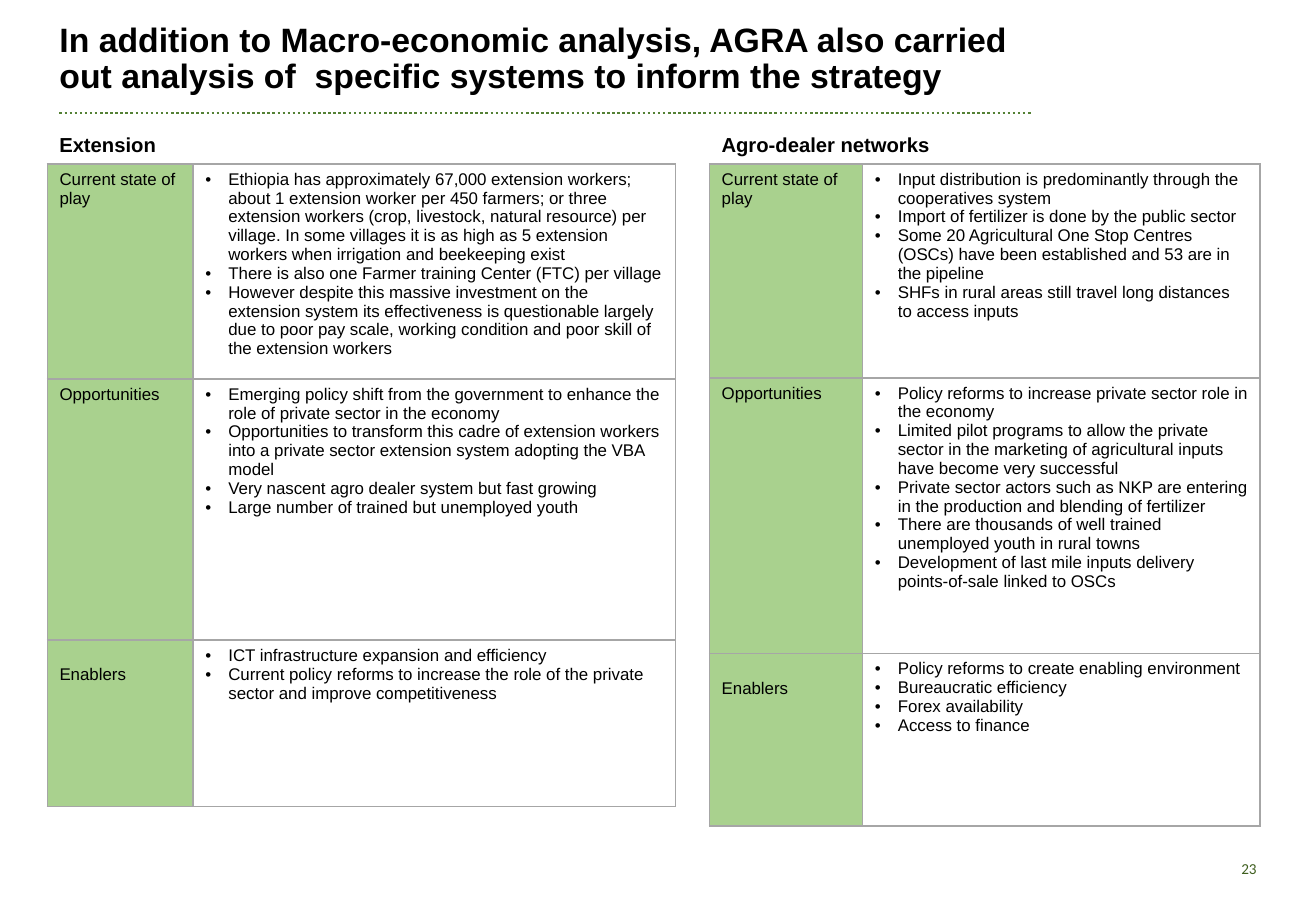
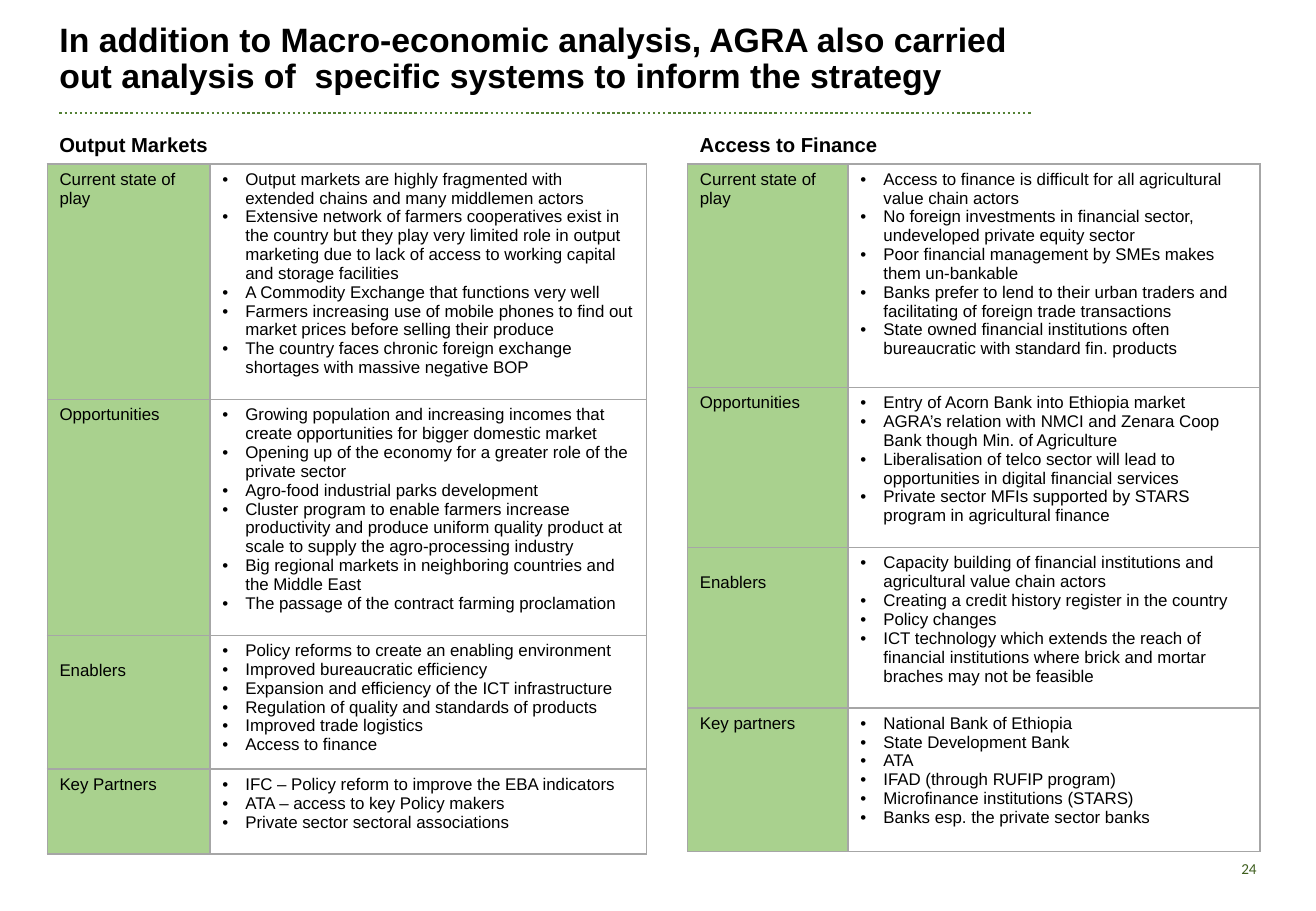
from dataclasses import dataclass

from lxml import etree
from pptx import Presentation
from pptx import util as u
from pptx.dml.color import RGBColor
from pptx.enum import dml, shapes, text
from pptx.oxml import ns


@dataclass(frozen=True)
class Theme:
    ink: str = "000000"
    paper: str = "FFFFFF"
    label: str = "A9D18E"
    border: str = "A6A6A6"
    rule: str = "548135"
    number: str = "3F5F1F"
    body_font: str = "Arial"
    number_font: str = "Calibri"
    title_size: int = 20
    heading_size: int = 12
    body_size: int = 10
    number_size: int = 9


T = Theme()
WIDTH, HEIGHT = u.Inches(10.83), u.Inches(7.5)
LEFT, RIGHT = 3.6, 95.75
TITLE_LEFT, RULE_RIGHT, RULE_Y = 4.52, 78.39, 12.4
HEADING_TOP, TABLE_TOP = 13.87, 18
TITLE = ("In addition to Macro-economic analysis, AGRA also carried out "
         "analysis of  specific systems to inform the strategy")


def x(share):
    return round(WIDTH * share / 100)


def y(share):
    return round(HEIGHT * share / 100)


def add_text(p, content, size=T.body_size, font=T.body_font, color=T.ink,
             bold=False, align=None, spacing=None):
    r = p.add_run()
    r.text = content
    r.font.size, r.font.name, r.font.bold = u.Pt(size), font, bold
    r.font.color.rgb = RGBColor.from_string(color)
    if align is not None:
        p.alignment = align
    if spacing is not None:
        p.line_spacing = spacing


def sub(parent, tag, **attrs):
    return etree.SubElement(parent, ns.qn(tag), **attrs)


def add_bullet(p):
    pPr = p._p.get_or_add_pPr()
    indent = u.Inches(0.19)
    pPr.set("marL", str(indent))
    pPr.set("indent", str(-indent))
    sub(sub(pPr, "a:buClr"), "a:srgbClr", val=T.ink)
    sub(pPr, "a:buFont", typeface=T.body_font)
    sub(pPr, "a:buChar", char="•")


def style_cell(cell, fill):
    tcPr = cell._tc.get_or_add_tcPr()
    for side in "LRTB":
        ln = sub(tcPr, f"a:ln{side}", w=str(u.Pt(1)))
        sub(sub(ln, "a:solidFill"), "a:srgbClr", val=T.border)
    cell.fill.solid()
    cell.fill.fore_color.rgb = RGBColor.from_string(fill)


class Deck:
    """Holds the presentation, its shared style and the current slide."""

    def __init__(self):
        self.prs = Presentation()
        self.prs.slide_width, self.prs.slide_height = WIDTH, HEIGHT
        self.s = None

    def slide(self, number):
        self.s = self.prs.slides.add_slide(self.prs.slide_layouts[6])
        self.textbox(73.04, 92.67, 23.36, 5.33, str(number),
                     anchor=text.MSO_ANCHOR.MIDDLE, size=T.number_size,
                     font=T.number_font, color=T.number,
                     align=text.PP_ALIGN.RIGHT)
        self.rule()
        self.textbox(TITLE_LEFT, 2, 73.13, 8.53, TITLE, inset=0,
                     anchor=text.MSO_ANCHOR.BOTTOM, size=T.title_size,
                     bold=True, spacing=0.9)

    def textbox(self, left, top, width, height, content, inset=None,
                anchor=text.MSO_ANCHOR.TOP, **fmt):
        sp = self.s.shapes.add_textbox(x(left), y(top), x(width), y(height))
        tf = sp.text_frame
        tf.word_wrap, tf.vertical_anchor = True, anchor
        if inset is not None:
            tf.margin_left = tf.margin_right = inset
            tf.margin_top = tf.margin_bottom = inset
        add_text(tf.paragraphs[0], content, **fmt)

    def rule(self):
        sp = self.s.shapes.add_connector(
            shapes.MSO_CONNECTOR.STRAIGHT, x(TITLE_LEFT), y(RULE_Y),
            x(RULE_RIGHT), y(RULE_Y))
        sp.line.color.rgb = RGBColor.from_string(T.rule)
        sp.line.width = u.Pt(1.5)
        sp.line.dash_style = dml.MSO_LINE.ROUND_DOT
        sub(sp._element.spPr, "a:effectLst")

    def panel(self, heading, left, right, label_width, rows):
        width = right - left
        self.textbox(left, HEADING_TOP, width, 4, heading,
                     size=T.heading_size, bold=True)
        total = sum(height for _, height, _ in rows)
        table = self.s.shapes.add_table(
            len(rows), 2, x(left), y(TABLE_TOP), x(width), y(total)).table
        table.first_row = table.horz_banding = False
        table.columns[0].width = x(label_width)
        table.columns[1].width = x(width - label_width)
        for row, (label, height, points) in zip(table.rows, rows):
            row.height = y(height)
            name, body = row.cells
            style_cell(name, T.label)
            style_cell(body, T.paper)
            if label == "Enablers":
                name.margin_top = u.Inches(0.21)
            add_text(name.text_frame.paragraphs[0], label)
            tf = body.text_frame
            for i, point in enumerate(points):
                p = tf.add_paragraph() if i else tf.paragraphs[0]
                add_bullet(p)
                add_text(p, point)


EXTENSION = [
    ("Current state of play", 23.6, [
        "Ethiopia has approximately 67,000 extension workers; about 1 extension worker per 450 "
        "farmers; or three extension workers (crop, livestock, natural resource) per village. In "
        "some villages it is as high as 5 extension workers when irrigation and beekeeping exist",
        "There is also one Farmer training Center (FTC) per village",
        "However despite this massive investment on the extension system its effectiveness is "
        "questionable largely due to poor pay scale, working condition and poor skill of the "
        "extension workers"]),
    ("Opportunities", 28.67, [
        "Emerging policy shift from the government to enhance the role of private sector in the "
        "economy",
        "Opportunities to transform this cadre of extension workers into a private sector "
        "extension system adopting the VBA model",
        "Very nascent agro dealer system but fast growing",
        "Large number of trained but unemployed youth"]),
    ("Enablers", 18.27, [
        "ICT infrastructure expansion and efficiency",
        "Current policy reforms to increase the role of the private sector and improve "
        "competitiveness"]),
]

AGRO_DEALERS = [
    ("Current state of play", 23.47, [
        "Input distribution is predominantly through the cooperatives system",
        "Import of fertilizer is done by the public sector",
        "Some 20 Agricultural One Stop Centres (OSCs) have been established and 53 are in the "
        "pipeline",
        "SHFs in rural areas still travel long distances to access inputs"]),
    ("Opportunities", 30.27, [
        "Policy reforms to increase private sector role in the economy",
        "Limited pilot programs to allow the private sector in the marketing of agricultural "
        "inputs have become very successful",
        "Private sector actors such as NKP are entering in the production and blending of "
        "fertilizer",
        "There are thousands of well trained unemployed youth in rural towns",
        "Development of last mile inputs delivery points-of-sale linked to OSCs"]),
    ("Enablers", 18.93, [
        "Policy reforms to create enabling environment",
        "Bureaucratic efficiency",
        "Forex availability",
        "Access to finance"]),
]

OUTPUT_MARKETS = [
    ("Current state of play", 25.87, [
        "Output markets are highly fragmented with extended chains and many middlemen actors",
        "Extensive network of farmers cooperatives exist in the country but they play very "
        "limited role in output marketing due to lack of access to working capital and storage "
        "facilities",
        "A Commodity Exchange that functions very well",
        "Farmers increasing use of mobile phones to find out market prices before selling their "
        "produce",
        "The country faces chronic foreign exchange shortages with massive negative BOP"]),
    ("Opportunities", 25.87, [
        "Growing population and increasing incomes that create opportunities for bigger domestic "
        "market",
        "Opening up of the economy for a greater role of the private sector",
        "Agro-food industrial parks development",
        "Cluster program to enable farmers increase productivity and produce uniform quality "
        "product at scale to supply the agro-processing industry",
        "Big regional markets in neighboring countries and the Middle East",
        "The passage of the contract farming proclamation"]),
    ("Enablers", 14.67, [
        "Policy reforms to create an enabling environment",
        "Improved bureaucratic efficiency",
        "Expansion and efficiency of the ICT infrastructure",
        "Regulation of quality and standards of products",
        "Improved trade logistics",
        "Access to finance"]),
    ("Key Partners", 9.33, [
        "IFC – Policy reform to improve the EBA indicators",
        "ATA – access to key Policy makers",
        "Private sector sectoral associations"]),
]

FINANCE = [
    ("Current state of play", 24.53, [
        "Access to finance is difficult for all agricultural value chain actors",
        "No foreign investments in financial sector, undeveloped private equity sector",
        "Poor financial management by SMEs makes them un-bankable",
        "Banks prefer to lend to their urban traders and facilitating of foreign trade "
        "transactions",
        "State owned financial institutions often bureaucratic with standard fin. products"]),
    ("Opportunities", 17.6, [
        "Entry of Acorn Bank into Ethiopia market",
        "AGRA’s relation with NMCI and Zenara Coop Bank though Min. of Agriculture",
        "Liberalisation of telco sector will lead to opportunities in digital financial services",
        "Private sector MFIs supported by STARS program in agricultural finance"]),
    ("Enablers", 17.6, [
        "Capacity building of financial institutions and agricultural value chain actors",
        "Creating a credit history register in the country",
        "Policy changes",
        "ICT technology which extends the reach of financial institutions where brick and mortar "
        "braches may not be feasible"]),
    ("Key partners", 15.73, [
        "National Bank of Ethiopia",
        "State Development Bank",
        "ATA",
        "IFAD (through RUFIP program)",
        "Microfinance institutions (STARS)",
        "Banks esp. the private sector banks"]),
]


def main():
    deck = Deck()
    deck.slide(23)
    deck.panel("Extension", LEFT, 51.34, 11.08, EXTENSION)
    deck.panel("Agro-dealer networks", 53.92, RIGHT, 11.63, AGRO_DEALERS)
    deck.slide(24)
    deck.panel("Output Markets", LEFT, 49.12, 12.37, OUTPUT_MARKETS)
    deck.panel("Access to Finance", 52.26, RIGHT, 12.19, FINANCE)
    deck.prs.save("out.pptx")


if __name__ == "__main__":
    main()
